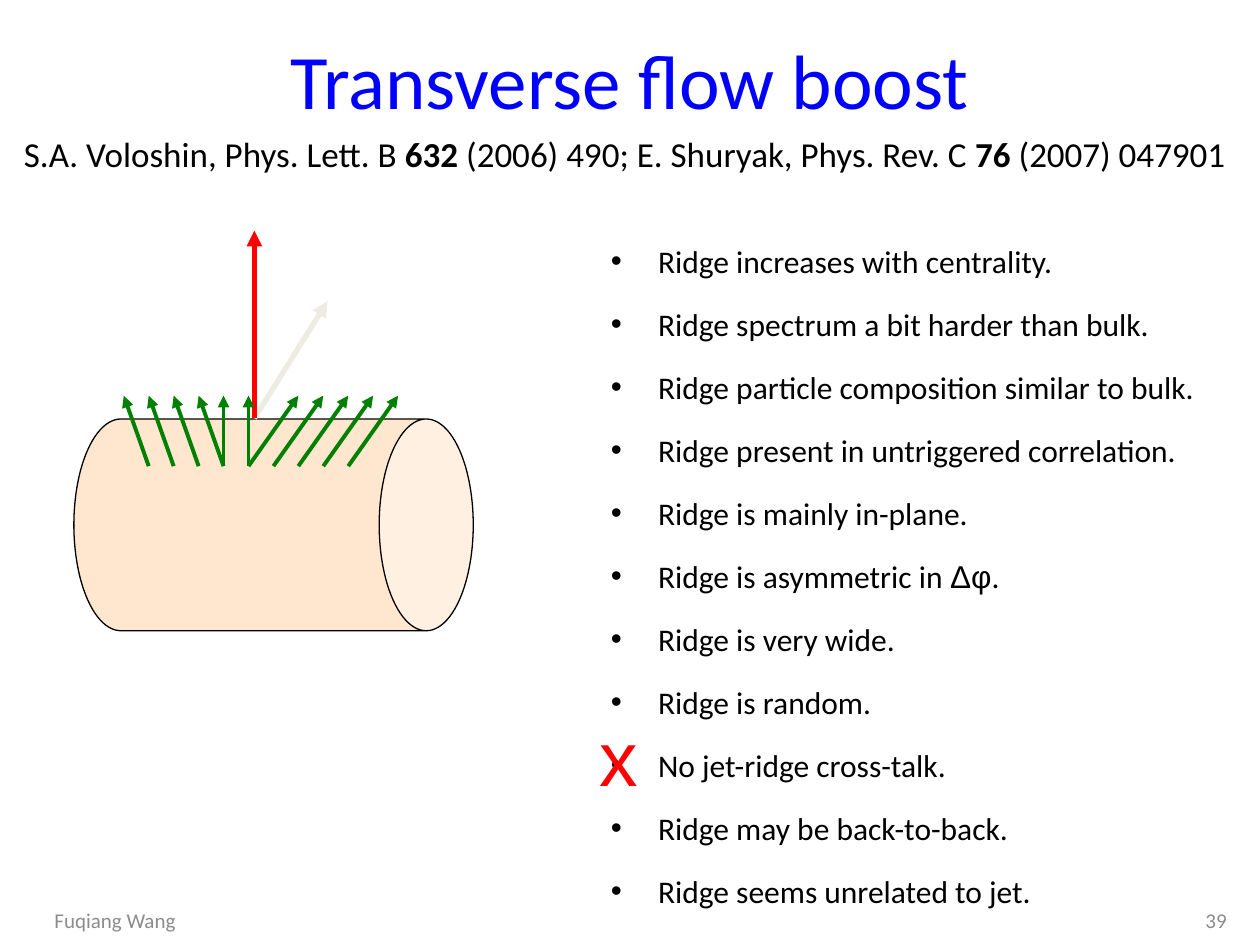
from pptx import Presentation
from pptx.dml.color import RGBColor
from pptx.enum.shapes import MSO_CONNECTOR, MSO_SHAPE
from pptx.enum.text import MSO_ANCHOR, PP_ALIGN
from pptx.oxml.ns import qn
from pptx.util import Pt
from lxml import etree

LEFT, CENTER, RIGHT = PP_ALIGN.LEFT, PP_ALIGN.CENTER, PP_ALIGN.RIGHT
TOP, MIDDLE = MSO_ANCHOR.TOP, MSO_ANCHOR.MIDDLE
STRAIGHT, CAN = MSO_CONNECTOR.STRAIGHT, MSO_SHAPE.CAN

COLORS = {"blue": "0000FF", "black": "000000", "gray": "8C8C8C", "red": "FF0000",
          "green": "008000", "ivory": "EEECE1", "peach": "FFCC99"}

# Content: a paragraph is a list of (text, font changes)
TITLE = [("Transverse flow boost", {})]
REFERENCES = [
    ("S.A. Voloshin, Phys. Lett. B ", {}), ("632", {"bold": True}),
    (" (2006) 490; E. Shuryak, Phys. Rev. C ", {}), ("76", {"bold": True}),
    (" (2007) 047901", {}),
]
FINDINGS = [
    [("Ridge increases with centrality.", {})],
    [("Ridge spectrum a bit harder than bulk.", {})],
    [("Ridge particle composition similar to bulk.", {})],
    [("Ridge present in untriggered correlation.", {})],
    [("Ridge is mainly in-plane.", {})],
    [("Ridge is asymmetric in ", {}), ("Δφ", {"name": "Arial"}), (".", {})],
    [("Ridge is very wide.", {})],
    [("Ridge is random.", {})],
    [("No jet-ridge cross-talk.", {})],
    [("Ridge may be back-to-back.", {})],
    [("Ridge seems unrelated to jet.", {})],
]
CROSS = [("x", {"name": "Arial"})]
AUTHOR = [("Fuqiang Wang", {})]
PAGE = [("39", {})]

# Flow arrows: (first base, last base, lean of the tip), all in steps
FLOW_FANS = [(0, 3, -1), (3, 4, 0), (4, 8, 2)]
FLOW_X, FLOW_STEP, FLOW_BASE, FLOW_TIP = 85, 14.25, 266.4, 226.1
# Jet arrows: tip and colour, from a common origin
JET_ORIGIN = (145.4, 239)
JETS = [((187.2, 172.1), "ivory"), ((145.4, 131.8), "red")]

prs = Presentation()
prs.slide_width, prs.slide_height = Pt(720), Pt(540)
s = prs.slides.add_slide(prs.slide_layouts[6])


def rgb(name):
    return RGBColor.from_string(COLORS[name])


def add_text(box, paragraphs, size, color, align=LEFT, anchor=TOP, wrap=True):
    sp = s.shapes.add_textbox(*map(Pt, box))
    tf = sp.text_frame
    tf.word_wrap, tf.vertical_anchor = wrap, anchor
    for i, runs in enumerate(paragraphs):
        p = tf.paragraphs[0] if i == 0 else tf.add_paragraph()
        p.alignment = align
        for text, changes in runs:
            r = p.add_run()
            r.text = text
            r.font.color.rgb = rgb(color)
            for key, value in {"name": "Calibri", "size": Pt(size), **changes}.items():
                setattr(r.font, key, value)
    return tf


def add_arrow(start, end, color, width):
    c = s.shapes.add_connector(STRAIGHT, *map(Pt, start + end))
    c.line.color.rgb, c.line.width = rgb(color), Pt(width)
    etree.SubElement(c.line._get_or_add_ln(), qn("a:tailEnd"), type="triangle")
    etree.SubElement(c._element.spPr, qn("a:effectLst"))


# Title and references
add_text((36, 0, 648, 90), [TITLE], 44, "blue", CENTER, MIDDLE)
add_text((0, 72, 714, 31.5), [REFERENCES], 20, "black", CENTER)

# Bulleted findings
tf = add_text((342, 124, 360, 272), FINDINGS, 18, "black")
for p in tf.paragraphs:
    p.line_spacing, p.space_before = 1.5, Pt(3.6)
    pPr = p._p.get_or_add_pPr()
    pPr.set("marL", str(Pt(27)))
    pPr.set("indent", str(-Pt(27)))
    etree.SubElement(pPr, qn("a:buFont"), typeface="Arial")
    etree.SubElement(pPr, qn("a:buChar"), char="•")

# Cross over the excluded finding
add_text((335.5, 402, 36.7, 60.5), [CROSS], 44, "red", wrap=False)

# Cylinder lying on its side
can = s.shapes.add_shape(CAN, *map(Pt, (95.8, 185.8, 121, 228.2)))
can.rotation = 90
can.adjustments[0] = 0.444
can.shadow.inherit = False
can.fill.solid()
can.fill.fore_color.rgb = rgb("peach")
fill_color = can._element.spPr.find(qn("a:solidFill"))[0]
etree.SubElement(fill_color, qn("a:alpha"), val="48000")
can.line.color.rgb, can.line.width = rgb("black"), Pt(0.75)

# Jet arrows, then flow arrows
for tip, color in JETS:
    add_arrow(JET_ORIGIN, tip, color, 3)
for first, last, lean in FLOW_FANS:
    for i in range(first, last + 1):
        x = FLOW_X + i * FLOW_STEP
        add_arrow((x, FLOW_BASE), (x + lean * FLOW_STEP, FLOW_TIP), "green", 2.25)

# Footer
add_text((24, 511, 168, 29), [AUTHOR], 12, "gray", LEFT, MIDDLE)
add_text((540, 511, 168, 29), [PAGE], 12, "gray", RIGHT, MIDDLE)

prs.save("out.pptx")
